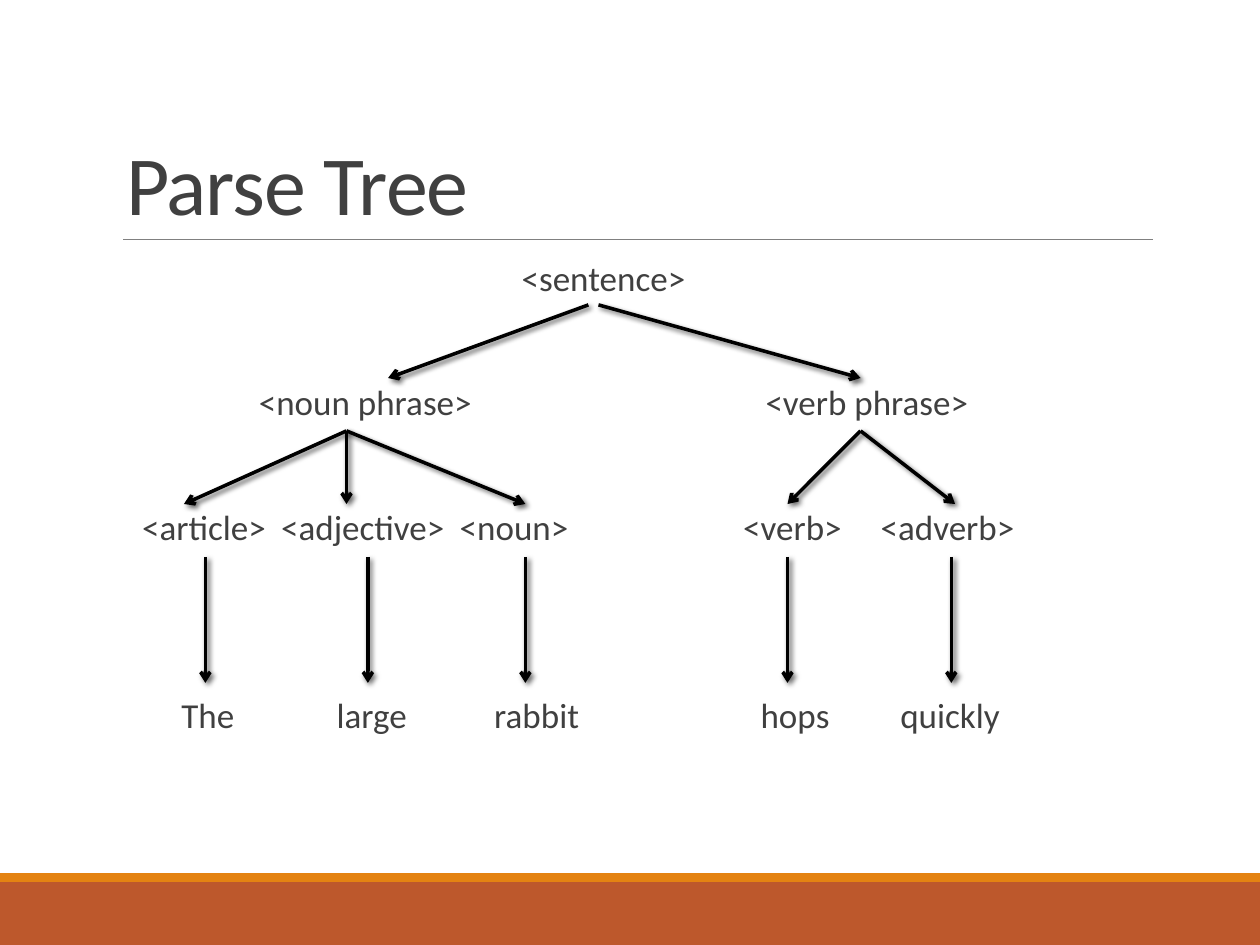
from lxml import etree
from pptx import Presentation
from pptx import util as u
from pptx.dml.color import RGBColor
from pptx.enum import shapes, text
from pptx.oxml import ns

COLORS = {"text": "404040", "rule": "808080", "arrow": "000000",
          "band": "BD582C", "stripe": "E48312"}
ROWS = [
    (2.2, [("<sentence>", 4.79)]),
    (3.19, [("<noun phrase>", 2.9), ("<verb phrase>", 6.88)]),
    (4.18, [("<article>", 1.62), ("<adjective>", 2.88), ("<noun>", 4.08),
            ("<verb>", 6.29), ("<adverb>", 7.52)]),
    (5.67, [("The", 1.65), ("large", 2.95), ("rabbit", 4.26),
            ("hops", 6.31), ("quickly", 7.54)]),
]
BRANCHES = [
    (2.42, 3, [(4.67, 3.08), (4.75, 6.83)]),
    (3.42, 4, [(2.75, 1.46), (2.75, 4.17), (2.75, 2.75), (6.83, 6.25), (6.83, 7.58)]),
    (4.42, 5.42, [(x, x) for x in (1.63, 2.92, 4.17, 6.25, 7.55)]),
]


def rgb(name):
    return RGBColor.from_string(COLORS[name])


def apply(obj, values):
    for name, value in values.items():
        setattr(obj, name, value)


def add(parent, tag, **attrs):
    el = etree.SubElement(parent, ns.qn(tag))
    for name, value in attrs.items():
        el.set(name, str(value))
    return el


class Deck:
    font = "Calibri"
    label_size = 20
    char_width = 0.16
    label_height = 0.4

    def __init__(self, width, height):
        self.prs = Presentation()
        apply(self.prs, {"slide_width": u.Inches(width), "slide_height": u.Inches(height)})
        self.s = self.prs.slides.add_slide(self.prs.slide_layouts[5])

    def run(self, p, content, size):
        r = p.add_run()
        r.text = content
        apply(r.font, {"name": self.font, "size": u.Pt(size)})
        r.font.color.rgb = rgb("text")
        return r

    def title(self, content, left, top, width, height):
        sp = self.s.shapes.title
        apply(sp, {"left": u.Inches(left), "top": u.Inches(top),
                   "width": u.Inches(width), "height": u.Inches(height)})
        tf = sp.text_frame
        apply(tf, {"vertical_anchor": text.MSO_ANCHOR.BOTTOM,
                   "auto_size": text.MSO_AUTO_SIZE.NONE})
        p = tf.paragraphs[0]
        apply(p, {"alignment": text.PP_ALIGN.LEFT, "line_spacing": 0.85})
        self.run(p, content, 48).font._element.set("spc", "-50")

    def node(self, label, x, y):
        width = self.char_width * len(label)
        box = (x - width / 2, y - self.label_height / 2, width, self.label_height)
        tf = self.s.shapes.add_textbox(*map(u.Inches, box)).text_frame
        apply(tf, {"margin_left": 0, "margin_right": 0, "margin_top": 0,
                   "margin_bottom": 0, "word_wrap": False,
                   "vertical_anchor": text.MSO_ANCHOR.MIDDLE})
        p = tf.paragraphs[0]
        p.alignment = text.PP_ALIGN.CENTER
        self.run(p, label, self.label_size)

    def band(self, color, *box):
        sp = self.s.shapes.add_shape(shapes.MSO_SHAPE.RECTANGLE, *map(u.Inches, box))
        sp.shadow.inherit = False
        sp.fill.solid()
        sp.fill.fore_color.rgb = rgb(color)
        sp.line.fill.background()

    def line(self, color, width, *ends):
        c = self.s.shapes.add_connector(shapes.MSO_CONNECTOR.STRAIGHT, *map(u.Inches, ends))
        c.line.width = u.Pt(width)
        c.line.color.rgb = rgb(color)
        return c, add(c._element.spPr, "a:effectLst")

    def arrow(self, *ends):
        c, effects = self.line("arrow", 2, *ends)
        add(c.line._get_or_add_ln(), "a:tailEnd", type="arrow")
        shadow = add(effects, "a:outerShdw", blurRad=u.Pt(3), dist=u.Pt(2),
                     dir=45 * 60000, algn="tl", rotWithShape=0)
        add(add(shadow, "a:srgbClr", val=COLORS["arrow"]), "a:alpha", val=60000)


def main():
    d = Deck(10, 7.5)
    d.band("band", 0, 7, 10, 0.5)
    d.band("stripe", 0, 6.93, 10, 0.07)
    d.line("rule", 0.5, 0.98, 1.9, 9.15, 1.9)
    d.title("Parse Tree", 0.9, 0.31, 8.25, 1.59)
    for y, nodes in ROWS:
        for label, x in nodes:
            d.node(label, x, y)
    for top, bottom, pairs in BRANCHES:
        for start, end in pairs:
            d.arrow(start, top, end, bottom)
    d.prs.save("out.pptx")


if __name__ == "__main__":
    main()
